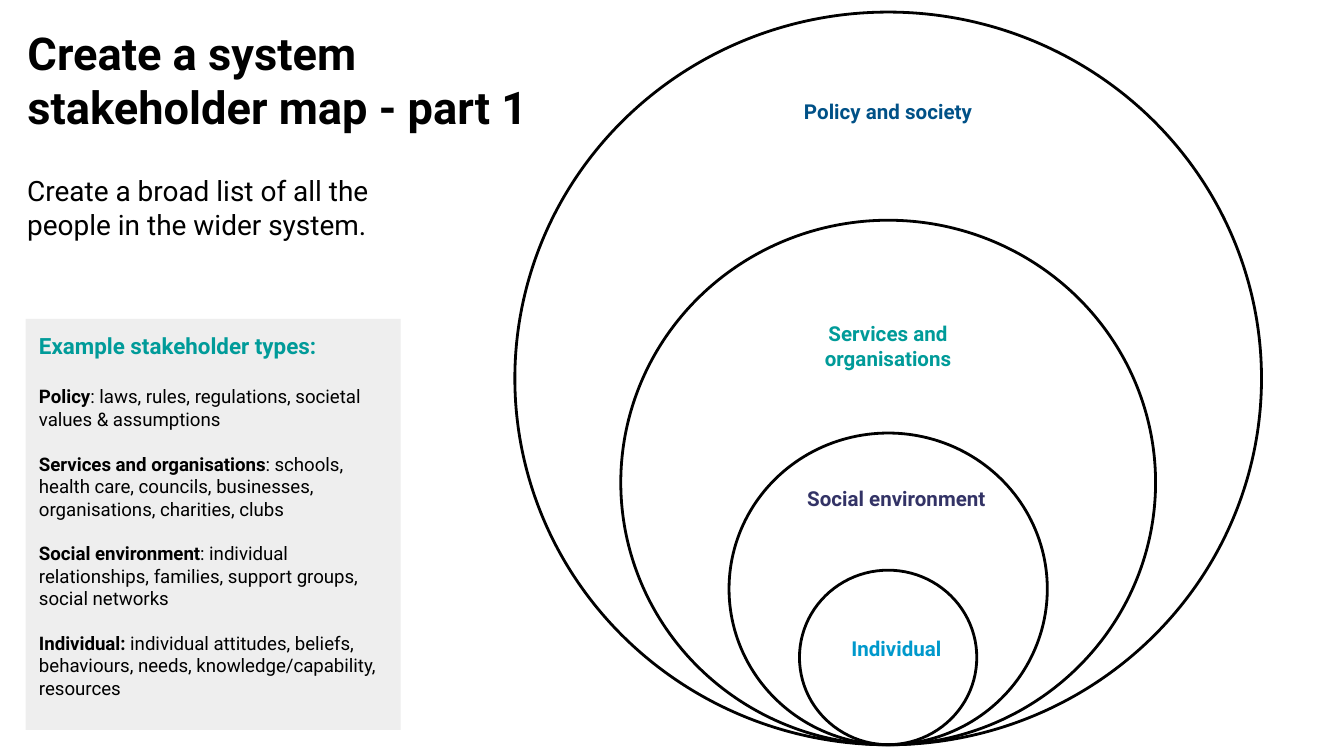
from dataclasses import dataclass

from lxml.etree import SubElement
from pptx import Presentation
from pptx.dml.color import RGBColor as Color
from pptx.enum.shapes import MSO_SHAPE as Shape
from pptx.enum.text import MSO_ANCHOR as Anchor, MSO_AUTO_SIZE as AutoSize, PP_ALIGN as Align
from pptx.oxml.ns import qn
from pptx.util import Pt


@dataclass(frozen=True)
class Theme:
    font: str = "Roboto"
    black: str = "000000"
    panel: str = "EEEEEE"
    policy: str = "005187"
    services: str = "009B99"
    social: str = "333366"
    individual: str = "0099CC"
    title_size: float = 24.2
    intro_size: float = 15
    heading_size: float = 12
    label_size: float = 11
    body_size: float = 10
    line_width: float = 1.5
    inset: float = 7.2


class SlideBuilder:
    def __init__(self, slide, theme):
        self.slide = slide
        self.theme = theme

    def place(self, box, left, top, width, height):
        box.left, box.top, box.width, box.height = map(Pt, (left, top, width, height))

    def prepare(self, box):
        frame = box.text_frame
        frame.word_wrap = True
        frame.auto_size = AutoSize.NONE
        frame.vertical_anchor = Anchor.TOP
        frame.margin_left = frame.margin_right = Pt(self.theme.inset)
        frame.margin_top = frame.margin_bottom = Pt(self.theme.inset)
        return frame

    def paragraph(self, para, spans, size, color, align=Align.LEFT, before=0):
        """Write (text, bold) spans into an unbulleted paragraph."""
        properties = para._p.get_or_add_pPr()
        properties.set("marL", "0")
        properties.set("indent", "0")
        SubElement(properties, qn("a:buNone"))
        para.alignment = align
        para.space_before = Pt(before)
        para.space_after = Pt(0)
        for text, bold in spans:
            span = para.add_run()
            span.text = text
            span.font.name = self.theme.font
            span.font.size = Pt(size)
            span.font.bold = bold
            span.font.color.rgb = Color.from_string(color)

    def title(self, text, *area):
        box = self.slide.shapes.title
        self.place(box, *area)
        para = self.prepare(box).paragraphs[0]
        self.paragraph(para, [(text, True)], self.theme.title_size, self.theme.black)

    def text(self, text, area, size, color, bold=False, align=Align.LEFT):
        box = self.slide.shapes.add_textbox(*map(Pt, area))
        para = self.prepare(box).paragraphs[0]
        self.paragraph(para, [(text, bold)], size, color, align)

    def ring(self, center, bottom, width, height):
        area = (center - width / 2, bottom - height, width, height)
        ring = self.slide.shapes.add_shape(Shape.OVAL, *map(Pt, area))
        ring.shadow.inherit = False
        ring.fill.background()
        ring.line.color.rgb = Color.from_string(self.theme.black)
        ring.line.width = Pt(self.theme.line_width)

    def panel(self, heading, entries, *area):
        theme = self.theme
        box = self.slide.placeholders[1]
        self.place(box, *area)
        box.fill.solid()
        box.fill.fore_color.rgb = Color.from_string(theme.panel)
        frame = self.prepare(box)
        self.paragraph(frame.paragraphs[0], [(heading, True)], theme.heading_size, theme.services)
        gap = 14
        for name, details in entries:
            spans = [(name, True), (details, False)]
            self.paragraph(frame.add_paragraph(), spans, theme.body_size, theme.black, before=gap)
            gap = 12


def main():
    deck = Presentation()
    deck.slide_width, deck.slide_height = Pt(720), Pt(405)
    theme = Theme()
    page = SlideBuilder(deck.slides.add_slide(deck.slide_layouts[1]), theme)

    # Title and introduction
    page.title("Create a system stakeholder map - part 1", 7.5, 6.5, 309, 87)
    page.text("Create a broad list of all the people in the wider system.",
              (7.5, 86, 236, 51), theme.intro_size, theme.black)

    # Nested rings, all resting on the same bottom point
    for width, height in ((400, 392.5), (286.5, 281), (170.5, 167), (95, 93.5)):
        page.ring(475.8, 399, width, height)

    # Ring labels
    labels = (
        ("Policy and society", theme.policy, 408.5, 46),
        ("Services and organisations", theme.services, 408.5, 165),
        ("Social environment", theme.social, 413, 253),
        ("Individual", theme.individual, 413, 333.5),
    )
    for text, color, left, top in labels:
        page.text(text, (left, top, 134.5, 36.5), theme.label_size, color, True, Align.CENTER)

    # Example panel
    page.panel("Example stakeholder types:", (
        ("Policy", ": laws, rules, regulations, societal values & assumptions"),
        ("Services and organisations",
         ": schools, health care, councils, businesses, organisations, charities, clubs"),
        ("Social environment",
         ": individual relationships, families, support groups, social networks"),
        ("Individual:",
         " individual attitudes, beliefs, behaviours, needs, knowledge/capability, resources"),
    ), 13.7, 170.8, 201, 220.3)

    deck.save("out.pptx")


if __name__ == "__main__":
    main()
